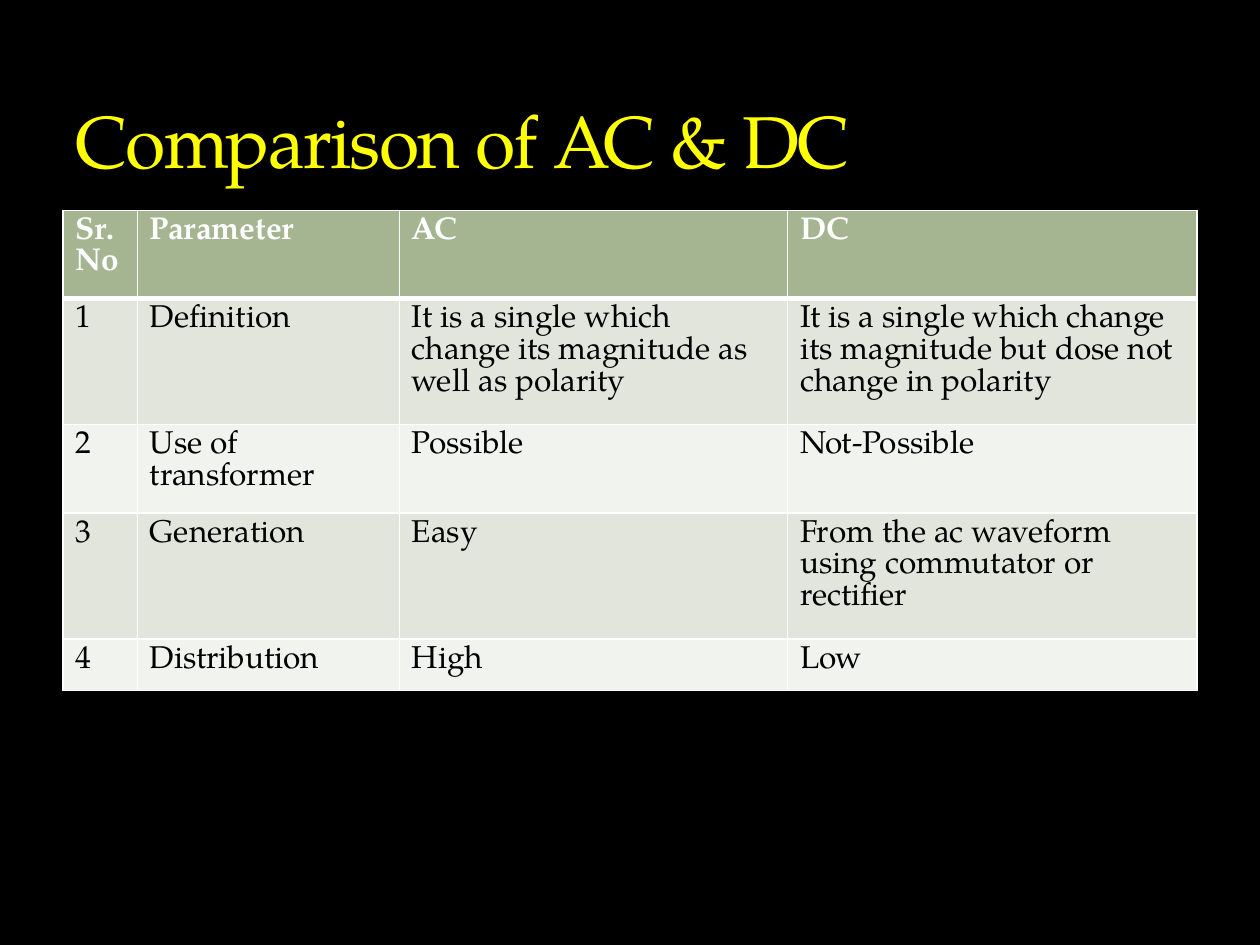
from pptx import Presentation
from pptx.dml.color import RGBColor
from pptx.enum.text import MSO_ANCHOR
from pptx.oxml import parse_xml
from pptx.oxml.ns import nsdecls
from pptx.util import Inches, Pt

BOTTOM = MSO_ANCHOR.BOTTOM
FONT = "TeX Gyre Pagella"
BLACK, WHITE, YELLOW = "000000", "FFFFFF", "FFFF00"
HEADER_FILL = "A5B592"
BAND_FILLS = ("E1E5DC", "F0F3EE")
COLUMN_WIDTHS = (0.59, 2.08, 3.08, 3.25)
ROW_HEIGHT = 0.41
ROWS = (
    ("Sr. No", "Parameter", "AC", "DC"),
    ("1", "Definition",
     "It is a single which change its magnitude as well as polarity",
     "It is a single which change its magnitude but dose not change in polarity"),
    ("2", "Use of transformer", "Possible", "Not-Possible"),
    ("3", "Generation", "Easy",
     "From the ac waveform using commutator or rectifier"),
    ("4", "Distribution", "High", "Low"),
)


def color(value):
    return RGBColor.from_string(value)


def style_font(font, size, value, bold=False):
    font.name = FONT
    font.size = Pt(size)
    font.bold = bold
    font.color.rgb = color(value)


def line_xml(tag, width, value, alpha=100):
    return parse_xml(
        f'<a:{tag} {nsdecls("a")} w="{Pt(width)}"><a:solidFill>'
        f'<a:srgbClr val="{value}"><a:alpha val="{alpha * 1000}"/></a:srgbClr>'
        f'</a:solidFill><a:prstDash val="solid"/></a:{tag}>'
    )


def add_title(slide, left, top, width, height):
    shape = slide.shapes.add_textbox(
        Inches(left), Inches(top), Inches(width), Inches(height))
    frame = shape.text_frame
    frame.word_wrap = True
    frame.vertical_anchor = BOTTOM
    run = frame.paragraphs[0].add_run()
    run.text = "Comparison of AC & DC"
    style_font(run.font, 42, YELLOW)
    properties = run._r.get_or_add_rPr()
    properties.set("spc", "-100")
    properties.insert(0, line_xml("ln", 0.25, "3C4422", 25))


def style_cell(cell, text, row_index):
    is_header = row_index == 0
    cell.text = text
    style_font(cell.text_frame.paragraphs[0].font, 18,
               WHITE if is_header else BLACK, is_header)
    top_width = 3 if row_index == 1 else 1
    bottom_width = 3 if is_header else 1
    properties = cell._tc.get_or_add_tcPr()
    for side, width in (("lnL", 1), ("lnR", 1),
                        ("lnT", top_width), ("lnB", bottom_width)):
        properties.append(line_xml(side, width, WHITE))
    fill = HEADER_FILL if is_header else BAND_FILLS[(row_index - 1) % 2]
    cell.fill.solid()
    cell.fill.fore_color.rgb = color(fill)


def add_comparison_table(slide, left, top, width, height):
    shape = slide.shapes.add_table(
        len(ROWS), len(COLUMN_WIDTHS), Inches(left), Inches(top),
        Inches(width), Inches(height))
    table = shape.table
    for column, column_width in zip(table.columns, COLUMN_WIDTHS):
        column.width = Inches(column_width)
    for index, (row, texts) in enumerate(zip(table.rows, ROWS)):
        row.height = Inches(ROW_HEIGHT)
        for cell, text in zip(row.cells, texts):
            style_cell(cell, text, index)
    shape.height = Inches(height)


def main():
    presentation = Presentation()
    presentation.slide_width = Inches(10)
    presentation.slide_height = Inches(7.5)
    slide = presentation.slides.add_slide(presentation.slide_layouts[6])
    slide.background.fill.solid()
    slide.background.fill.fore_color.rgb = color(BLACK)
    add_title(slide, 0.5, 0.17, 9, 1.33)
    add_comparison_table(slide, 0.5, 1.67, 9, 3.81)
    presentation.save("out.pptx")


if __name__ == "__main__":
    main()
